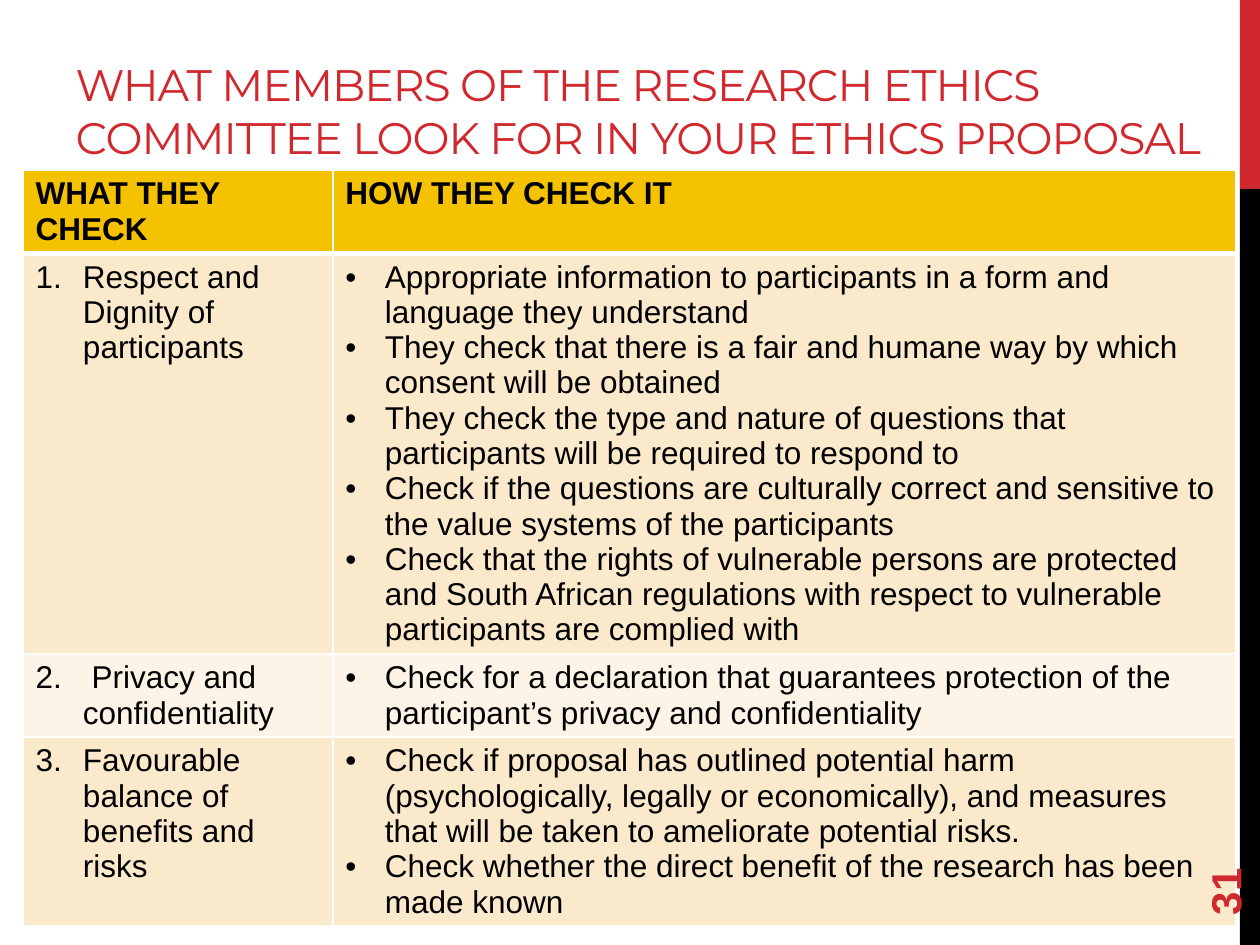
from lxml import etree
from pptx import Presentation
from pptx.dml.color import RGBColor
from pptx.enum.shapes import MSO_SHAPE
from pptx.enum.text import MSO_ANCHOR, MSO_AUTO_SIZE, PP_ALIGN
from pptx.oxml.ns import qn
from pptx.util import Pt

RECTANGLE = MSO_SHAPE.RECTANGLE
BOTTOM, MIDDLE = MSO_ANCHOR.BOTTOM, MSO_ANCHOR.MIDDLE
NO_AUTOFIT = MSO_AUTO_SIZE.NONE
LEFT = PP_ALIGN.LEFT

RED, BLACK, WHITE = "D1282E", "000000", "FFFFFF"
GOLD, SAND, CREAM = "F5C201", "FBE9CC", "FDF4E7"

TITLE = ("WHAT MEMBERS OF THE RESEARCH ETHICS COMMITTEE "
         "LOOK FOR IN YOUR ETHICS PROPOSAL")
HEADINGS = ("WHAT THEY CHECK", "HOW THEY CHECK IT")
CRITERIA = [
    ("Respect and Dignity of participants", [
        "Appropriate information to participants in a form and language they understand",
        "They check that there is a fair and humane way by which consent will be obtained",
        "They check the type and nature of questions that participants will be "
        "required to respond to",
        "Check if the questions are culturally correct and sensitive to the value "
        "systems of the participants",
        "Check that the rights of vulnerable persons are protected and South African "
        "regulations with respect to vulnerable participants are complied with",
    ]),
    (" Privacy and confidentiality", [
        "Check for a declaration that guarantees protection of the participant’s "
        "privacy and confidentiality",
    ]),
    ("Favourable balance of benefits and risks", [
        "Check if proposal has outlined potential harm (psychologically, legally or "
        "economically), and measures that will be taken to ameliorate potential risks.",
        "Check whether the direct benefit of the research has been made known",
    ]),
]
COLUMN_WIDTHS = (177, 516)
ROW_HEIGHTS = (47.4, 228.6, 47.4, 108)


def paint(color_format, hex_color):
    color_format.rgb = RGBColor.from_string(hex_color)


def fill(target, hex_color):
    target.fill.solid()
    paint(target.fill.fore_color, hex_color)


def add_run(paragraph, text, size, color, font="Arial", bold=False):
    run = paragraph.add_run()
    run.text = text
    run.font.name, run.font.size, run.font.bold = font, Pt(size), bold
    paint(run.font.color, color)
    return run


def set_marker(paragraph, indent, tag, **attributes):
    """Give a paragraph a hanging bullet or number."""
    properties = paragraph._p.get_or_add_pPr()
    properties.set("marL", str(Pt(indent)))
    properties.set("indent", str(-Pt(indent)))
    etree.SubElement(properties, qn("a:buFont"), typeface="Arial")
    etree.SubElement(properties, qn(tag), **attributes)


def set_borders(cell, bottom_width):
    properties = cell._tc.get_or_add_tcPr()
    for side, width in (("L", 1), ("R", 1), ("T", 1), ("B", bottom_width)):
        line = etree.SubElement(properties, qn(f"a:ln{side}"), w=str(Pt(width)))
        solid = etree.SubElement(line, qn("a:solidFill"))
        etree.SubElement(solid, qn("a:srgbClr"), val=WHITE)


def add_side_bar(slide, left, top, width, height):
    red_height = height / 5
    for color, y, h in ((RED, top, red_height),
                        (BLACK, top + red_height, height - red_height)):
        bar = slide.shapes.add_shape(RECTANGLE, Pt(left), Pt(y), Pt(width), Pt(h))
        bar.shadow.inherit = False
        fill(bar, color)
        bar.line.fill.background()


def place_title(slide, left, top, width, height):
    title = slide.shapes.title
    title.left, title.top, title.width, title.height = map(
        Pt, (left, top, width, height))
    frame = title.text_frame
    frame.word_wrap, frame.auto_size = True, NO_AUTOFIT
    frame.vertical_anchor = BOTTOM
    paragraph = frame.paragraphs[0]
    paragraph.alignment = LEFT
    run = add_run(paragraph, TITLE, 25.2, RED, font="Montserrat")
    run.font._element.set("spc", "-60")


def add_criteria_table(slide, left, top):
    table = slide.shapes.add_table(
        len(ROW_HEIGHTS), len(COLUMN_WIDTHS), Pt(left), Pt(top),
        Pt(sum(COLUMN_WIDTHS)), Pt(sum(ROW_HEIGHTS))).table
    for column, width in zip(table.columns, COLUMN_WIDTHS):
        column.width = Pt(width)
    for row, height in zip(table.rows, ROW_HEIGHTS):
        row.height = Pt(height)

    # Borders come before fills in the cell properties
    for number, row in enumerate(table.rows):
        color = GOLD if number == 0 else SAND if number % 2 else CREAM
        for cell in row.cells:
            set_borders(cell, 1 if number else 3)
            fill(cell, color)

    # Header row
    for column, heading in enumerate(HEADINGS):
        paragraph = table.cell(0, column).text_frame.paragraphs[0]
        add_run(paragraph, heading, 18, BLACK, bold=True)

    # Numbered criteria with their checks
    for number, (criterion, checks) in enumerate(CRITERIA, start=1):
        paragraph = table.cell(number, 0).text_frame.paragraphs[0]
        set_marker(paragraph, 27, "a:buAutoNum",
                   type="arabicPeriod", startAt=str(number))
        add_run(paragraph, criterion, 18, BLACK)
        frame = table.cell(number, 1).text_frame
        for position, check in enumerate(checks):
            paragraph = frame.add_paragraph() if position else frame.paragraphs[0]
            set_marker(paragraph, 22.5, "a:buChar", char="•")
            add_run(paragraph, check, 18, BLACK)


def add_page_number(slide, left, top, width, height):
    page_number = slide.shapes.add_textbox(Pt(left), Pt(top), Pt(width), Pt(height))
    page_number.rotation = 270
    frame = page_number.text_frame
    frame.word_wrap = True
    frame.vertical_anchor = MIDDLE
    add_run(frame.paragraphs[0], "31", 24, RED, bold=True)


def main():
    deck = Presentation()
    deck.slide_width, deck.slide_height = Pt(720), Pt(540)
    slide = deck.slides.add_slide(deck.slide_layouts[5])
    fill(slide.background, WHITE)
    add_side_bar(slide, 708.5, 0, 11.5, 540)
    place_title(slide, 36, 3.6, 670, 93.6)
    add_criteria_table(slide, 13.2, 97.2)
    add_page_number(slide, 648, 463.7, 103.7, 28.8)
    deck.save("out.pptx")


if __name__ == "__main__":
    main()
